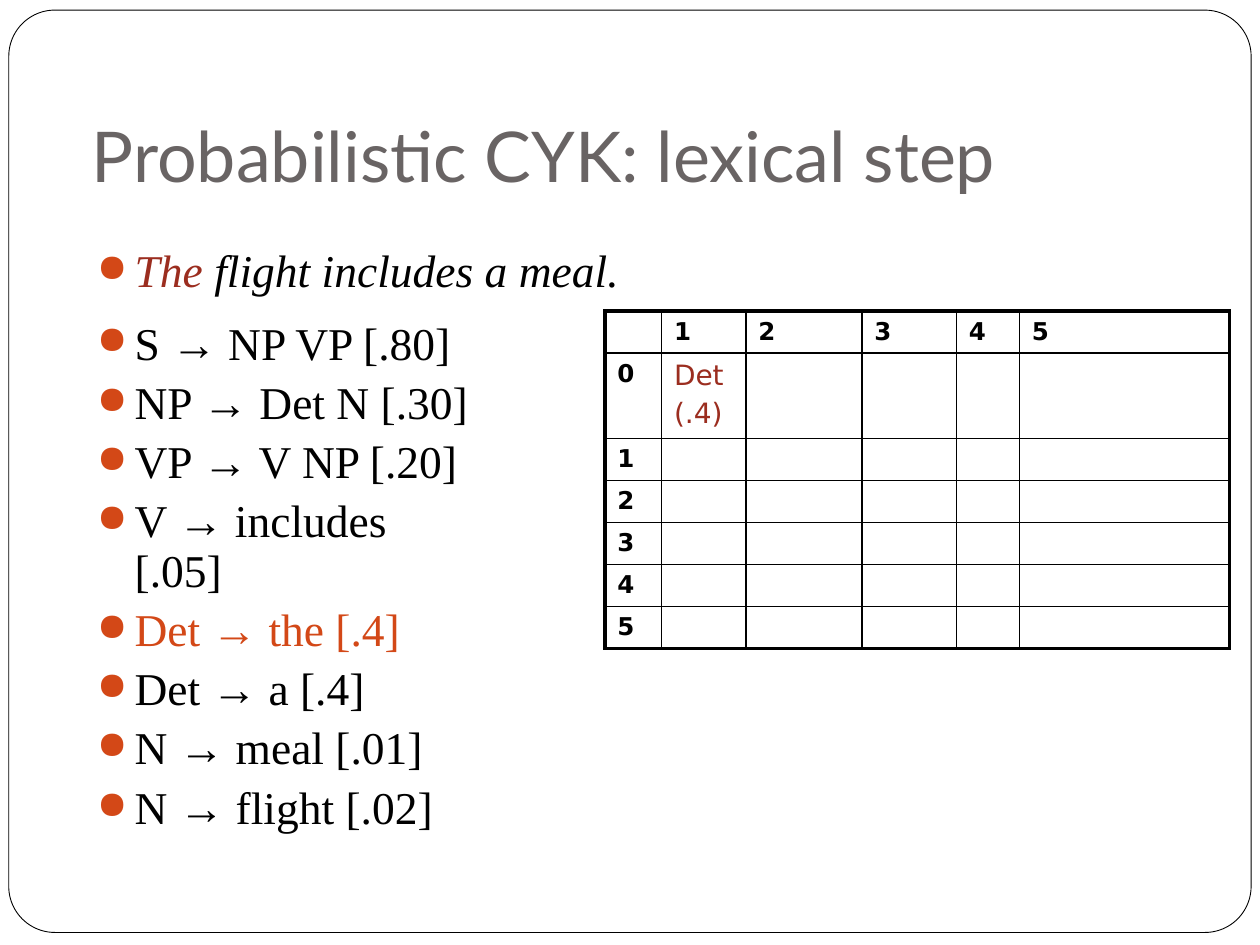
from dataclasses import dataclass
from lxml.etree import SubElement
from pptx import Presentation
from pptx.dml.color import RGBColor
from pptx.enum.shapes import MSO_SHAPE
from pptx.enum.text import MSO_ANCHOR, MSO_AUTO_SIZE, PP_ALIGN
from pptx.oxml import parse_xml
from pptx.oxml.ns import nsdecls, qn
from pptx.util import Inches, Pt


@dataclass(frozen=True)
class Theme:
    ink: str = "000000"
    paper: str = "FFFFFF"
    grey: str = "696464"
    red: str = "9B2D1F"
    orange: str = "D34817"
    head: str = "Lato"
    body: str = "Times New Roman"
    grid: str = "DejaVu Sans"
    big: float = 40
    text: float = 26
    word: float = 16
    label: float = 14
    thin: float = 1
    thick: float = 2.25


theme = Theme()
deck = Presentation()
deck.slide_width, deck.slide_height = Inches(10), Inches(7.5)
wide, high = deck.slide_width, deck.slide_height
slide = deck.slides.add_slide(deck.slide_layouts[5])


def share(x, y, w, h):
    """Turn percentages of the slide into left, top, width, height."""
    return [int(part * size / 100) for part, size in zip((x, y, w, h), (wide, high) * 2)]


def write(para, text, name, size, color, **form):
    run = para.add_run()
    run.text = text
    run.font.color.rgb = RGBColor.from_string(color)
    for key, val in {"name": name, "size": Pt(size), **form}.items():
        setattr(run.font, key, val)


# Rounded page frame, behind everything else
frame = slide.shapes.add_shape(MSO_SHAPE.ROUNDED_RECTANGLE, *share(0.7, 1.07, 98.6, 97.6))
frame.adjustments[0] = 0.05
frame.shadow.inherit = False
frame.fill.solid()
frame.fill.fore_color.rgb = RGBColor.from_string(theme.paper)
frame.line.color.rgb = RGBColor.from_string(theme.ink)
frame.line.width = Pt(0.5)
slide.shapes[0].element.addprevious(frame.element)

# Title
title = slide.shapes.title
for key, val in zip(("left", "top", "width", "height"), share(6.3, 4.4, 87.5, 17.73)):
    setattr(title, key, val)
box = title.text_frame
for key, val in {"vertical_anchor": MSO_ANCHOR.BOTTOM, "word_wrap": True,
                 "auto_size": MSO_AUTO_SIZE.NONE, "margin_bottom": Inches(0.1)}.items():
    setattr(box, key, val)
box.paragraphs[0].alignment = PP_ALIGN.LEFT
write(box.paragraphs[0], "Probabilistic CYK: lexical step", theme.head, theme.big, theme.grey)

# Sentence and grammar rules, each line a list of (text, colour, italic)
sent = [[("The", theme.red, True), (" flight includes a meal.", theme.ink, True)]]
rules = ["S → NP VP [.80]", "NP → Det N [.30]", "VP → V NP [.20]", "V → includes [.05]",
         "Det → the [.4]", "Det → a [.4]", "N → meal [.01]", "N → flight [.02]"]
used = "Det → the [.4]"
lines = [[(rule, theme.orange if rule == used else theme.ink, False)] for rule in rules]

for place, items in ((share(6.7, 25.6, 87.5, 6.67), sent), (share(6.7, 33.3, 32.5, 60), lines)):
    box = slide.shapes.add_textbox(*place).text_frame
    box.word_wrap = True
    for i, item in enumerate(items):
        para = box.add_paragraph() if i else box.paragraphs[0]
        para.line_spacing = 0.9
        para.space_before = Pt(5.8)
        props = para._p.get_or_add_pPr()
        props.set("marL", str(Inches(0.3)))
        props.set("indent", str(-Inches(0.3)))
        tint = SubElement(props, qn("a:buClr"))
        SubElement(tint, qn("a:srgbClr"), val=theme.orange)
        SubElement(props, qn("a:buSzPct"), val="85000")
        SubElement(props, qn("a:buChar"), char="●")
        for text, color, slant in item:
            write(para, text, theme.body, theme.text, color, italic=slant)

# Parse chart: column and row sizes as percentages of the slide
cols = [4.5, 6.7, 9.2, 7.5, 5, 16.7]
rows = [4.4, 8.8] + [4.4] * 5
place = share(48, 32.9, sum(cols), sum(rows))
chart = slide.shapes.add_table(len(rows), len(cols), *place).table
chart.first_row = chart.horz_banding = False
for col, part in zip(chart.columns, cols):
    col.width = int(wide * part / 100)
for row, part in zip(chart.rows, rows):
    row.height = int(high * part / 100)

words = {(0, c): ["%d" % c] for c in range(1, len(cols))}
words.update({(r, 0): ["%d" % (r - 1)] for r in range(1, len(rows))})
words[1, 1] = ["Det", "(.4)"]

for r in range(len(rows)):
    for c in range(len(cols)):
        cell = chart.cell(r, c)
        cell.fill.background()
        # Thick lines on the rim, thin lines inside
        rim = {"L": c == 0, "R": c == len(cols) - 1, "T": r == 0, "B": r == len(rows) - 1}
        props = cell._tc.get_or_add_tcPr()
        for i, (side, edge) in enumerate(rim.items()):
            width = Pt(theme.thick if edge else theme.thin)
            props.insert(i, parse_xml(
                f'<a:ln{side} {nsdecls("a")} w="{width}"><a:solidFill>'
                f'<a:srgbClr val="{theme.ink}"/></a:solidFill></a:ln{side}>'))
        # Labels are bold, entries are plain and red
        label = r == 0 or c == 0
        size, color = (theme.label, theme.ink) if label else (theme.word, theme.red)
        box = cell.text_frame
        for i, text in enumerate(words.get((r, c), [])):
            para = box.add_paragraph() if i else box.paragraphs[0]
            if i:
                para.space_before = Pt(0.2 * size)
            write(para, text, theme.grid, size, color, bold=label)
        if (r, c) not in words:
            SubElement(box.paragraphs[0]._p, qn("a:endParaRPr"), sz=str(theme.label * 100))

deck.save("out.pptx")
